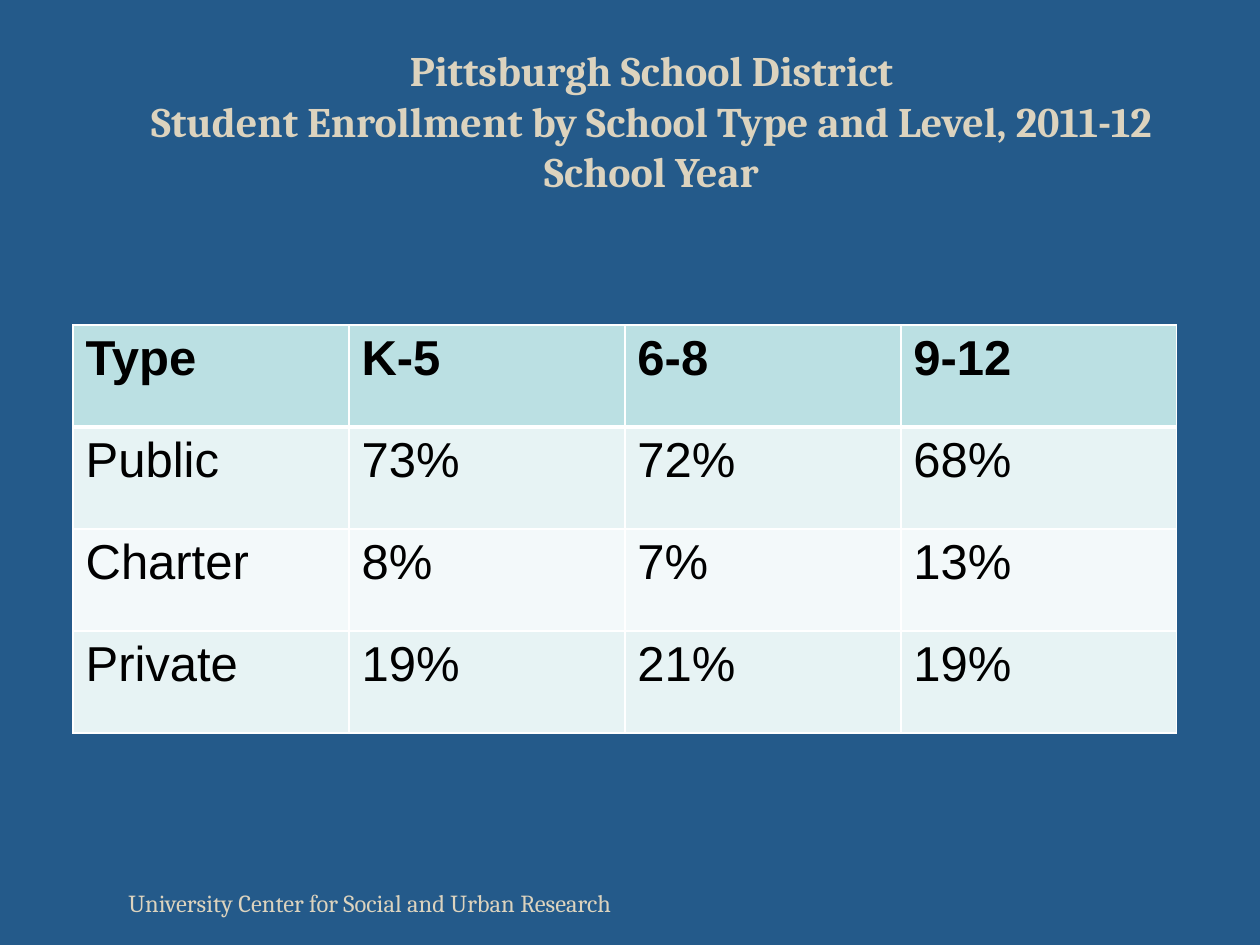
import pptx
import pptx.dml.color
import pptx.enum.text
import pptx.oxml
import pptx.oxml.ns
import pptx.util

TITLE = [
    "Pittsburgh School District",
    "Student Enrollment by School Type and Level, 2011-12 School Year",
]
FOOTER = ["University Center for Social and Urban Research"]
ENROLLMENT = [
    ("Type", "K-5", "6-8", "9-12"),
    ("Public", "73%", "72%", "68%"),
    ("Charter", "8%", "7%", "13%"),
    ("Private", "19%", "21%", "19%"),
]
THEME = {
    "background": "245A8A",
    "text": "DCD3BE",
    "cell_text": "000000",
    "header": "BBE0E3",
    "bands": ("E7F3F4", "F3F9FA"),
    "border": "FFFFFF",
    "thin": 1,
    "thick": 3,
    "serif": "Cambria",
    "sans": "Arial",
    "title_size": 24,
    "table_size": 28,
    "footer_size": 14,
}
WIDTH, HEIGHT = pptx.util.Inches(10), pptx.util.Inches(7.5)
COLUMN, ROW = pptx.util.Inches(2.19), pptx.util.Inches(0.81)


def rgb(name):
    return pptx.dml.color.RGBColor.from_string(THEME[name])


def style(paragraph, face, size, color, bold=False):
    font = paragraph.font
    font.name, font.size, font.bold = THEME[face], pptx.util.Pt(THEME[size]), bold
    font.color.rgb = rgb(color)


def add_text(slide, lines, box, size, bold=False, alignment=None):
    """Add a text box whose place is given in inches."""
    frame = slide.shapes.add_textbox(*map(pptx.util.Inches, box)).text_frame
    frame.word_wrap = True
    frame.text = "\n".join(lines)
    for paragraph in frame.paragraphs:
        paragraph.alignment = alignment
        style(paragraph, "serif", size, "text", bold)
    return frame


def set_borders(cell, widths):
    """Draw the left, right, top and bottom borders, with widths in points."""
    properties = cell._tc.get_or_add_tcPr()
    for index, (side, width) in enumerate(zip("LRTB", widths)):
        line = pptx.oxml.parse_xml(
            f'<a:ln{side} {pptx.oxml.ns.nsdecls("a")} w="{pptx.util.Pt(width)}">'
            f'<a:solidFill><a:srgbClr val="{THEME["border"]}"/></a:solidFill></a:ln{side}>'
        )
        properties.insert(index, line)


def add_enrollment_table(slide):
    rows, columns = len(ENROLLMENT), len(ENROLLMENT[0])
    table = slide.shapes.add_table(
        rows, columns, pptx.util.Inches(0.58), pptx.util.Inches(2.58),
        COLUMN * columns, ROW * rows,
    ).table
    thin, thick = THEME["thin"], THEME["thick"]
    for row, values in enumerate(ENROLLMENT):
        fill = THEME["bands"][(row - 1) % 2] if row else THEME["header"]
        top = thick if row == 1 else thin
        bottom = thick if row == 0 else thin
        for column, value in enumerate(values):
            cell = table.cell(row, column)
            cell.text = value
            style(cell.text_frame.paragraphs[0], "sans", "table_size", "cell_text", row == 0)
            cell.fill.solid()
            cell.fill.fore_color.rgb = pptx.dml.color.RGBColor.from_string(fill)
            set_borders(cell, (thin, thin, top, bottom))


def main():
    presentation = pptx.Presentation()
    presentation.slide_width, presentation.slide_height = WIDTH, HEIGHT
    slide = presentation.slides.add_slide(presentation.slide_layouts[6])
    slide.background.fill.solid()
    slide.background.fill.fore_color.rgb = rgb("background")

    add_text(slide, FOOTER, (0.92, 7, 4.67, 0.5), "footer_size")
    add_enrollment_table(slide)
    title = add_text(slide, TITLE, (0.67, 0.42, 9, 0.67), "title_size", bold=True,
                     alignment=pptx.enum.text.PP_ALIGN.CENTER)
    title.vertical_anchor = pptx.enum.text.MSO_ANCHOR.MIDDLE
    title.margin_top = pptx.util.Inches(0.45)

    presentation.save("out.pptx")


if __name__ == "__main__":
    main()
